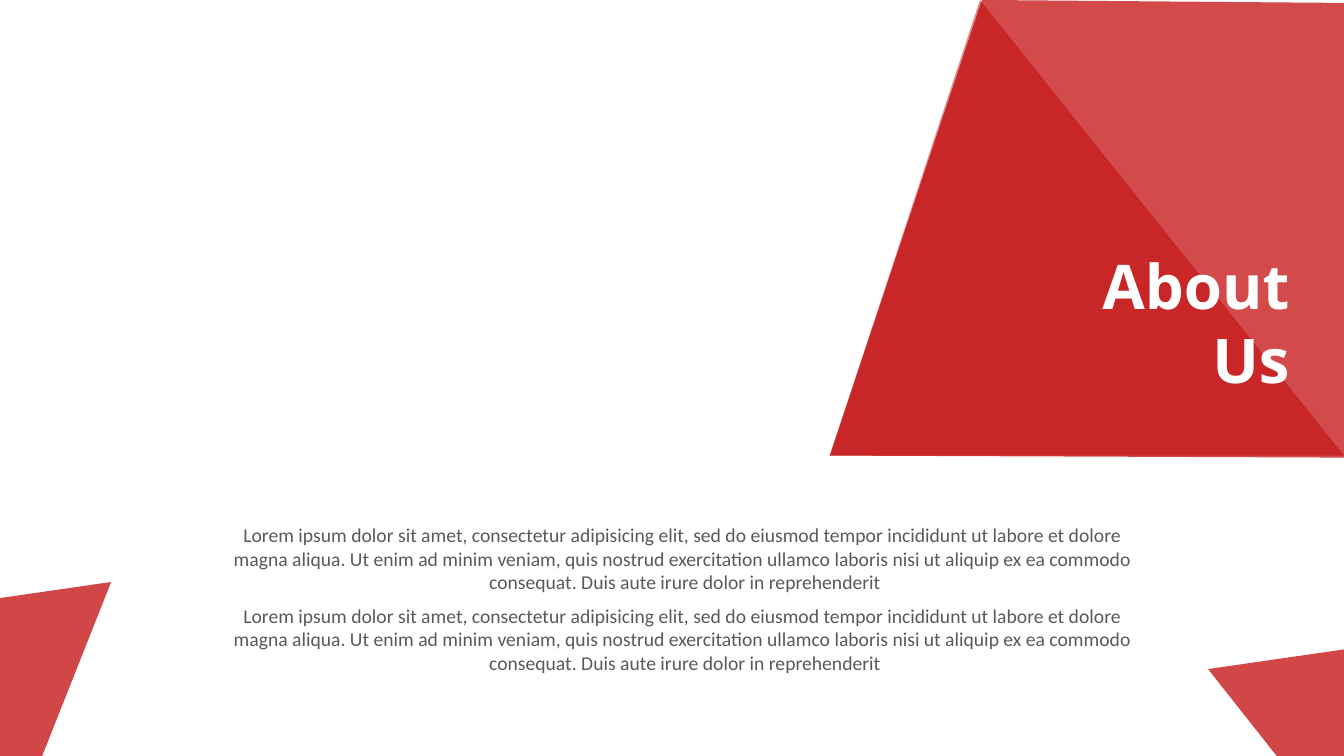
from pptx import Presentation
from pptx.dml.color import RGBColor
from pptx.enum.shapes import MSO_SHAPE
from pptx.enum.text import MSO_ANCHOR, MSO_AUTO_SIZE, PP_ALIGN
from pptx.oxml.xmlchemy import OxmlElement
from pptx.util import Inches, Pt

THEME = {
    "red": RGBColor(0xC0, 0x00, 0x00),
    "white": RGBColor(0xFF, 0xFF, 0xFF),
    "grey": RGBColor(0x59, 0x59, 0x59),
    "title_size": Pt(44),
    "body_size": Pt(14),
    "title_font": "Open Sans",
    "body_font": "Calibri",
}


def write(sp, text, box, font, size, color, align, bold=False):
    sp.left, sp.top, sp.width, sp.height = [Inches(v) for v in box]
    tf = sp.text_frame
    tf.word_wrap = True
    tf.auto_size = MSO_AUTO_SIZE.NONE
    tf.vertical_anchor = MSO_ANCHOR.TOP
    for i, line in enumerate(text):
        p = tf.paragraphs[0] if i == 0 else tf.add_paragraph()
        p.alignment = align
        p.line_spacing = 1.0
        p.space_before = p.space_after = Pt(0)
        pPr = p._p.get_or_add_pPr()
        pPr.set("marL", "0")
        pPr.set("indent", "0")
        pPr.append(OxmlElement("a:buNone"))
        r = p.add_run()
        r.text = line
        r.font.name = font
        r.font.size = size
        r.font.bold = bold
        r.font.color.rgb = color
    sp._element.getparent().append(sp._element)


def paint(sp, opacity):
    sp.shadow.inherit = False
    sp.line.fill.background()
    sp.fill.solid()
    sp.fill.fore_color.rgb = THEME["red"]
    alpha = OxmlElement("a:alpha")
    alpha.set("val", str(opacity * 1000))
    sp._element.spPr.find(".//{*}srgbClr").append(alpha)


prs = Presentation()
prs.slide_width = Inches(13.33)
prs.slide_height = Inches(7.5)
s = prs.slides.add_slide(prs.slide_layouts[3])
title, *bodies = s.placeholders

panels = [
    ([(9.74, 0), (13.38, 0.03), (13.36, 4.54), (8.23, 4.52)], 71),
    ([(8.23, 4.52), (9.72, 0), (13.33, 4.52)], 47),
]
for points, opacity in panels:
    start, *rest = [(Inches(x), Inches(y)) for x, y in points]
    fb = s.shapes.build_freeform(*start)
    fb.add_line_segments(rest, close=True)
    paint(fb.convert_to_shape(), opacity)

for left, top in [(-0.86, 5.39), (12.33, 5.92)]:
    sp = s.shapes.add_shape(MSO_SHAPE.ISOSCELES_TRIANGLE, Inches(left),
                            Inches(top), Inches(2.34), Inches(2.02))
    sp.rotation = 51.7
    paint(sp, 72)

write(title, ["About", "Us"], (9.46, 2.41, 3.43, 1.58),
      font=THEME["title_font"], size=THEME["title_size"],
      color=THEME["white"], align=PP_ALIGN.RIGHT, bold=True)

lorem = [
    "Lorem ipsum dolor sit amet, consectetur adipisicing elit, sed do eiusmod tempor incididunt ut labore et dolore ",
    "magna aliqua. Ut enim ad minim veniam, quis nostrud exercitation ullamco laboris nisi ut aliquip ex ea commodo ",
    "consequat. Duis aute irure dolor in reprehenderit",
]
for i, body in enumerate(bodies):
    write(body, lorem, (1.47, 5.14 + 0.8 * i, 10.65, 0.81),
          font=THEME["body_font"], size=THEME["body_size"],
          color=THEME["grey"], align=PP_ALIGN.CENTER)

prs.save("out.pptx")
